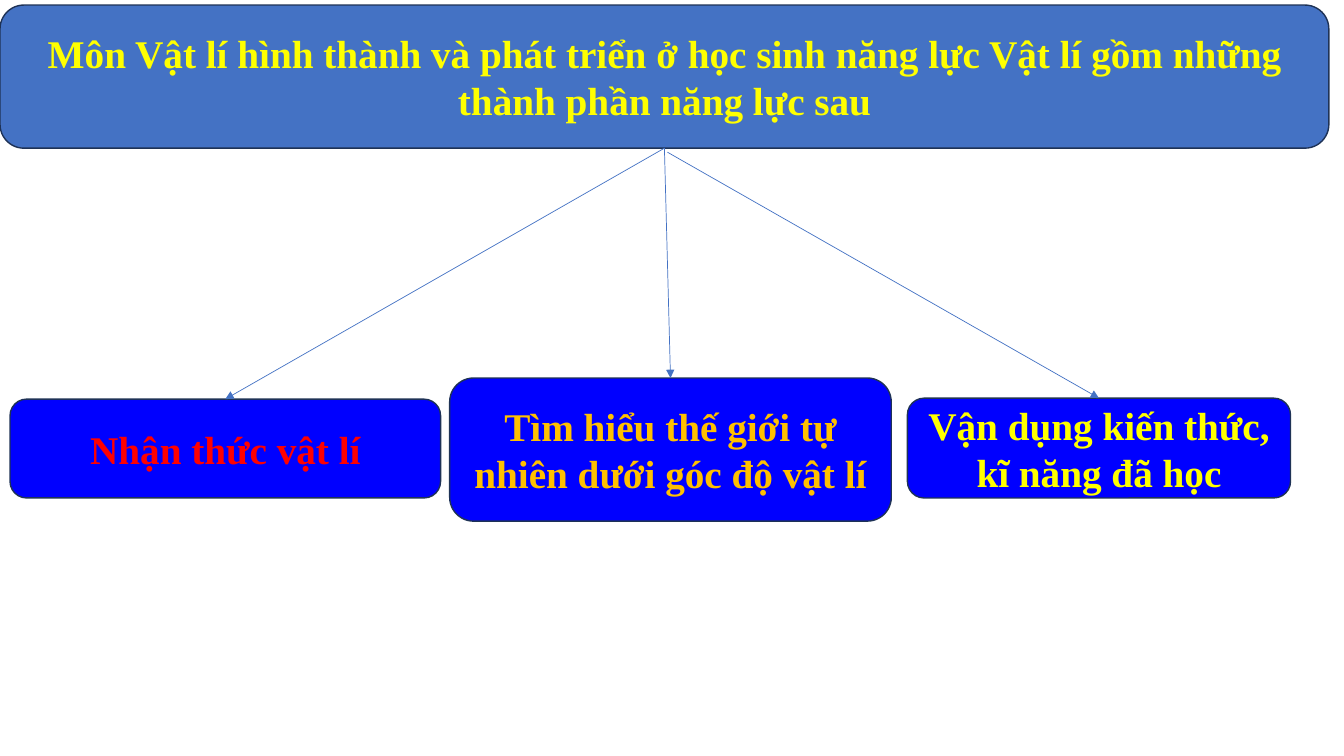
from pptx import Presentation
from pptx.dml.color import RGBColor
from pptx.enum.shapes import MSO_CONNECTOR, MSO_SHAPE
from pptx.enum.text import MSO_ANCHOR, PP_ALIGN
from pptx.oxml.ns import qn
from pptx.util import Inches, Pt
from lxml.etree import SubElement

BLUE = RGBColor(0x44, 0x72, 0xC4)
DEEP_BLUE = RGBColor(0x00, 0x00, 0xFF)
NAVY = RGBColor(0x1E, 0x32, 0x56)
YELLOW = RGBColor(0xFF, 0xFF, 0x00)
RED = RGBColor(0xFF, 0x00, 0x00)
GOLD = RGBColor(0xFF, 0xC0, 0x00)

BOTTOM, TOP = 2, 0  # connection sites of a rectangle

# Text, text colour, (left, top, width, height)
COMPETENCES = [
    ("Nhận thức vật lí", RED, (0.1, 3.96, 4.27, 0.98)),
    ("Tìm hiểu thế giới tự nhiên dưới góc độ vật lí", GOLD, (4.46, 3.75, 4.38, 1.42)),
    ("Vận dụng kiến thức, kĩ năng đã học", YELLOW, (9, 3.95, 3.8, 0.99)),
]


def write_text(frame, text, color, size=28, font="Times New Roman", bold=True):
    frame.word_wrap = True
    frame.vertical_anchor = MSO_ANCHOR.MIDDLE
    paragraph = frame.paragraphs[0]
    paragraph.alignment = PP_ALIGN.CENTER
    run = paragraph.add_run()
    run.text = text
    run.font.name = font
    run.font.size = Pt(size)
    run.font.bold = bold
    run.font.color.rgb = color


def add_box(slide, text, color, place, fill):
    box = slide.shapes.add_shape(MSO_SHAPE.ROUNDED_RECTANGLE, *map(Inches, place))
    box.shadow.inherit = False
    box.fill.solid()
    box.fill.fore_color.rgb = fill
    box.line.color.rgb = NAVY
    box.line.width = Pt(1)
    write_text(box.text_frame, text, color)
    return box


def add_arrow(slide, start, target):
    """Draw an arrow from a point to the top of the target box."""
    arrow = slide.shapes.add_connector(MSO_CONNECTOR.STRAIGHT, *start, *start)
    arrow.end_connect(target, TOP)
    arrow.line.color.rgb = BLUE
    arrow.line.width = Pt(0.5)
    SubElement(arrow.line._get_or_add_ln(), qn("a:tailEnd"), type="triangle")
    SubElement(arrow._element.spPr, qn("a:effectLst"))
    return arrow


def main():
    deck = Presentation()
    deck.slide_width, deck.slide_height = Inches(13.33), Inches(7.5)
    slide = deck.slides.add_slide(deck.slide_layouts[6])

    # Heading
    heading = add_box(
        slide,
        "Môn Vật lí hình thành và phát triển ở học sinh năng lực Vật lí "
        "gồm những thành phần năng lực sau",
        YELLOW, (0, 0.05, 13.18, 1.42), BLUE)

    # Component competences
    knowledge, inquiry, application = [
        add_box(slide, text, color, place, DEEP_BLUE)
        for text, color, place in COMPETENCES]

    # Arrows; the last one starts just off the heading's edge
    heading_foot = (Inches(6.59), Inches(1.47))
    for competence in (knowledge, inquiry):
        add_arrow(slide, heading_foot, competence).begin_connect(heading, BOTTOM)
    add_arrow(slide, (Inches(6.62), Inches(1.51)), application)

    deck.save("out.pptx")


if __name__ == "__main__":
    main()
